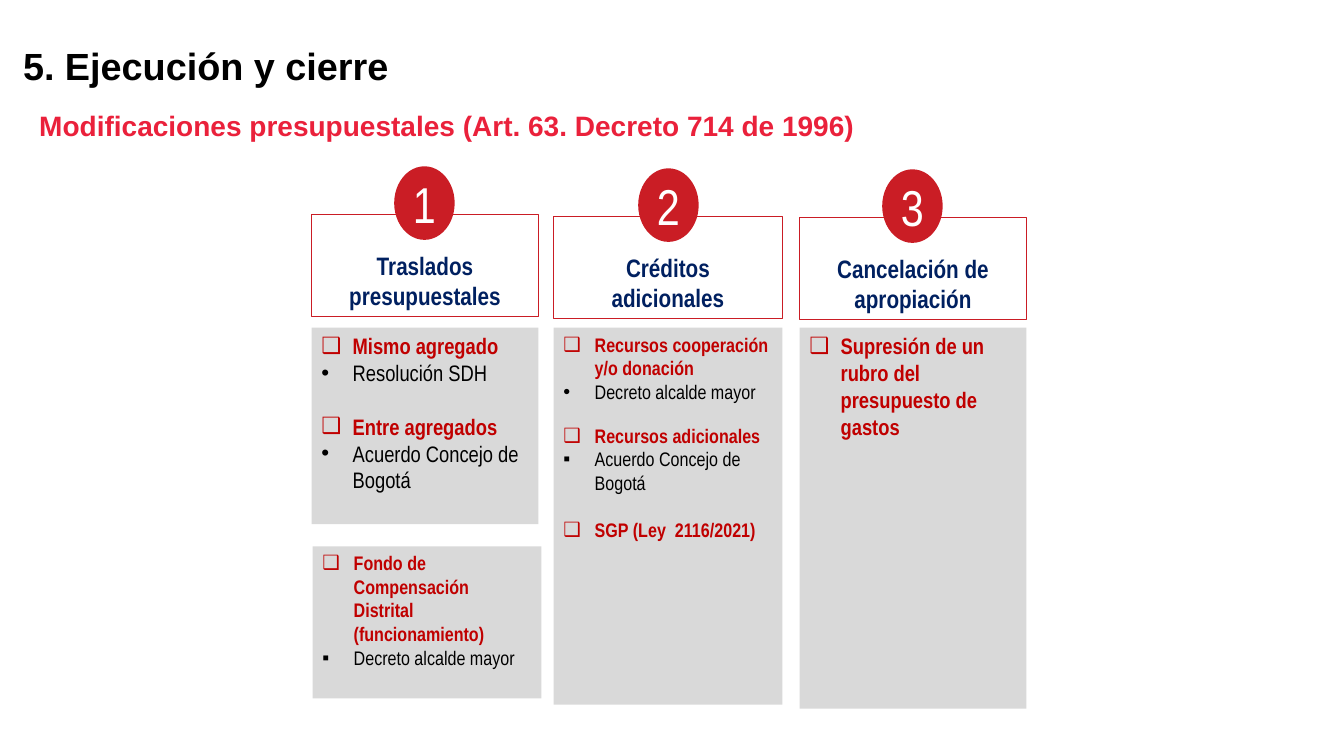
import dataclasses
import typing

import pptx
import pptx.dml.color
import pptx.enum.shapes
import pptx.enum.text
import pptx.oxml.ns
import pptx.util
import lxml.etree

WIDTH = pptx.util.Inches(13.33)
HEIGHT = pptx.util.Inches(7.5)
COLS = 133.3
ROWS = 75
RED = "CA1D25"
DARK = "C00000"
NAVY = "002060"
GRAY = "D9D9D9"
WHITE = "FFFFFF"
BLACK = "000000"
NARROW = "Arial Narrow"
SHAPE = pptx.enum.shapes.MSO_SHAPE
ALIGN = pptx.enum.text.PP_ALIGN
ANCHOR = pptx.enum.text.MSO_ANCHOR


@dataclasses.dataclass
class Item:
    text: str
    mark: str = "❑"
    gap: float = 0


@dataclasses.dataclass
class Step:
    left: float
    top: float
    width: float
    title: list[str]


@dataclasses.dataclass
class Panel:
    left: float
    top: float
    width: float
    height: float
    size: int
    items: list[Item]


STEPS = [
    Step(30.9, 21.3, 22.5, ["Traslados presupuestales"]),
    Step(54.9, 21.5, 22.7, ["Créditos", "adicionales"]),
    Step(79.3, 21.6, 22.5, ["Cancelación de apropiación"]),
]
PANELS = [
    Panel(30.9, 32.5, 22.5, 19.5, 16, [
        Item("Mismo agregado"),
        Item("Resolución SDH", "•"),
        Item("Entre agregados", gap=19),
        Item("Acuerdo Concejo de Bogotá", "•"),
    ]),
    Panel(54.9, 32.5, 22.7, 37.4, 14, [
        Item("Recursos cooperación y/o donación"),
        Item("Decreto alcalde mayor", "•"),
        Item("Recursos adicionales", gap=14.6),
        Item("Acuerdo Concejo de Bogotá", "▪"),
        Item("SGP (Ley  2116/2021)", gap=16.8),
    ]),
    Panel(79.3, 32.5, 22.5, 37.8, 16, [
        Item("Supresión de un rubro del presupuesto de gastos"),
    ]),
    Panel(31, 54.2, 22.7, 15.1, 14, [
        Item("Fondo de Compensación Distrital (funcionamiento)"),
        Item("Decreto alcalde mayor", "▪"),
    ]),
]

deck = pptx.Presentation()
deck.slide_width = WIDTH
deck.slide_height = HEIGHT
slide = deck.slides.add_slide(deck.slide_layouts[6])


def col(count: float) -> int:
    return round(WIDTH * count / COLS)


def row(count: float) -> int:
    return round(HEIGHT * count / ROWS)


def hue(code: str) -> pptx.dml.color.RGBColor:
    return pptx.dml.color.RGBColor.from_string(code)


def area(left: float, top: float, width: float, height: float) -> tuple[int, ...]:
    return col(left), row(top), col(width), row(height)


def block(kind: SHAPE, place: tuple[int, ...], fill: str,
          edge: str | None = None) -> typing.Any:
    shape = slide.shapes.add_shape(kind, *place)
    shape.shadow.inherit = False
    shape.fill.solid()
    shape.fill.fore_color.rgb = hue(fill)
    if edge:
        shape.line.color.rgb = hue(edge)
        shape.line.width = pptx.util.Pt(1)
    else:
        shape.line.fill.background()
    shape.text_frame.word_wrap = True
    shape.text_frame.vertical_anchor = ANCHOR.TOP
    return shape


def bullet(para: typing.Any, mark: str) -> None:
    props = para._p.get_or_add_pPr()
    dent = pptx.util.Inches(0.31)
    props.set("marL", str(dent))
    props.set("indent", str(-dent))
    name = pptx.oxml.ns.qn
    lxml.etree.SubElement(props, name("a:buFont")).set("typeface", "Arial")
    lxml.etree.SubElement(props, name("a:buChar")).set("char", mark)


def write(frame: typing.Any, text: str, *, size: float, color: str,
          font: str = NARROW, bold: bool = True, align: ALIGN = ALIGN.LEFT,
          mark: str = "", gap: float = 0) -> None:
    para = frame.paragraphs[0]
    if para.runs:
        para = frame.add_paragraph()
    if mark:
        bullet(para, mark)
    para.alignment = align
    if gap:
        para.space_before = pptx.util.Pt(gap)
    run = para.add_run()
    run.text = text
    run.font.size = pptx.util.Pt(size)
    run.font.name = font
    run.font.bold = bold
    run.font.color.rgb = hue(color)


def label(place: tuple[int, ...], text: str, size: float, color: str) -> None:
    frame = slide.shapes.add_textbox(*place).text_frame
    frame.word_wrap = True
    write(frame, text, size=size, color=color, font="Arial")


def header(step: Step, index: int) -> None:
    place = area(step.left, step.top, step.width, 10.1)
    frame = block(SHAPE.RECTANGLE, place, WHITE, RED).text_frame
    frame.margin_top = row(3.5)
    for line in step.title:
        write(frame, line, size=18, color=NAVY, align=ALIGN.CENTER)
    place = area(39.1 + 24.2 * index, step.top - 4.8, 6, 7.3)
    frame = block(SHAPE.OVAL, place, RED).text_frame
    frame.vertical_anchor = ANCHOR.MIDDLE
    frame.word_wrap = False
    write(frame, str(index + 1), size=36, color=WHITE, bold=False,
          align=ALIGN.CENTER)


def detail(panel: Panel) -> None:
    place = area(panel.left, panel.top, panel.width, panel.height)
    frame = block(SHAPE.RECTANGLE, place, GRAY).text_frame
    for item in panel.items:
        main = item.mark == "❑"
        write(frame, item.text, size=panel.size, color=DARK if main else BLACK,
              bold=main, mark=item.mark, gap=item.gap)


def main() -> None:
    for index, step in enumerate(STEPS):
        header(step, index)
    for panel in PANELS:
        detail(panel)
    label(area(1.3, 3.7, 87.1, 5.6), "5. Ejecución y cierre", 27, BLACK)
    label(area(2.9, 10.3, 116.8, 7.7),
          "Modificaciones presupuestales (Art. 63. Decreto 714 de 1996)", 20, "EA213B")
    deck.save("out.pptx")


if __name__ == "__main__":
    main()
